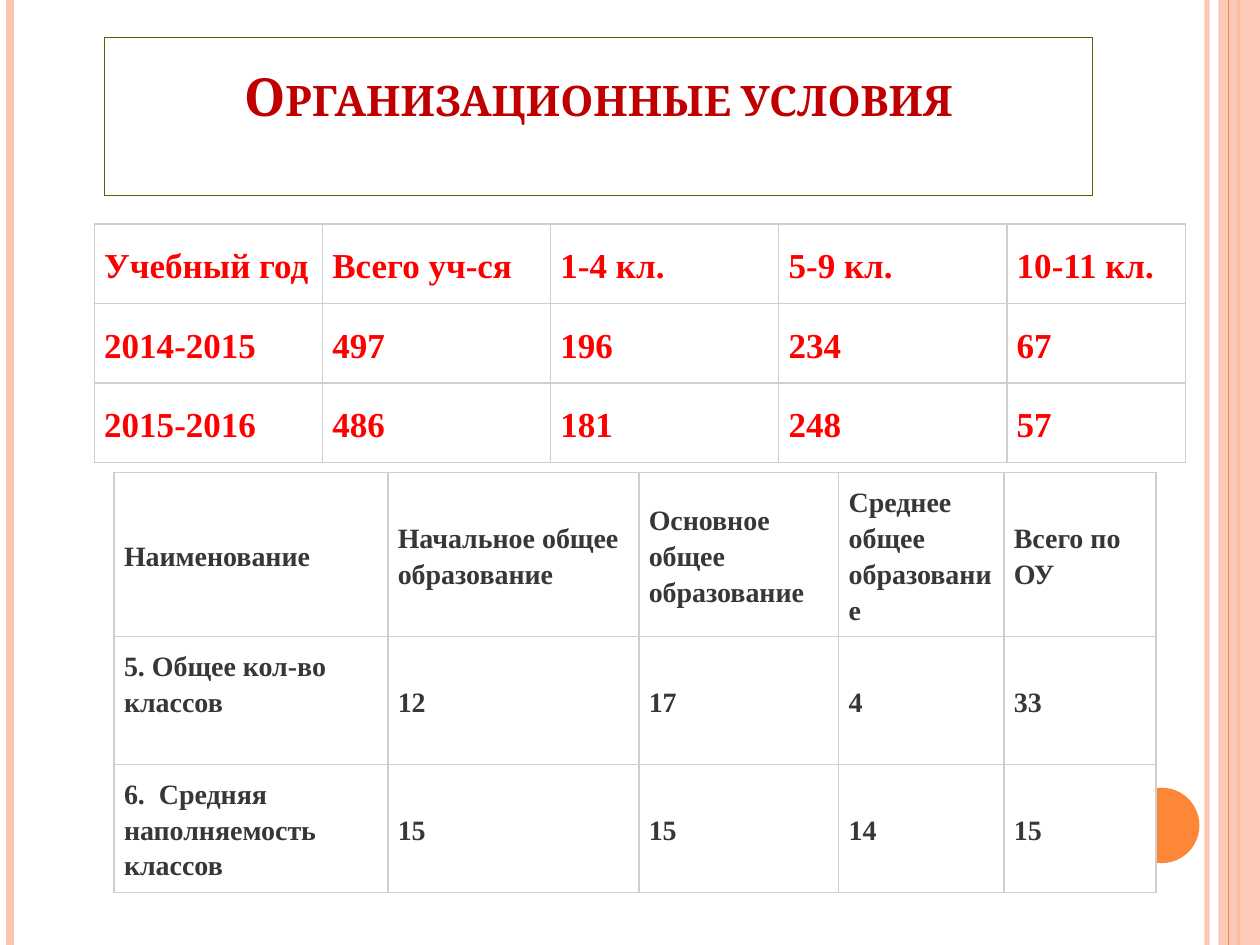
from dataclasses import dataclass

from lxml.etree import SubElement
from pptx import Presentation
from pptx.dml.color import RGBColor
from pptx.enum.shapes import MSO_CONNECTOR, MSO_SHAPE
from pptx.enum.text import MSO_ANCHOR, MSO_AUTO_SIZE, PP_ALIGN
from pptx.oxml.ns import qn
from pptx.util import Cm, Pt

# Content
TITLE = "Организационные условия"

PUPILS = [
    ["Учебный год", "Всего уч-ся", "1-4 кл.", "5-9 кл.", "10-11 кл."],
    ["2014-2015", "497", "196", "234", "67"],
    ["2015-2016", "486", "181", "248", "57"],
]

CLASSES = [
    ["Наименование", "Начальное общее образование", "Основное общее\nобразование",
     "Среднее\nобщее\nобразование", "Всего по ОУ"],
    ["5. Общее кол-во классов", "12", "17", "4", "33"],
    ["6.  Средняя наполняемость классов", "15", "15", "14", "15"],
]


@dataclass(frozen=True)
class Theme:
    white: str = "FFFFFF"
    peach: str = "FEC3AE"
    orange: str = "FE8637"
    frame: str = "675A00"
    grid: str = "CFCFCF"
    title: str = "C00000"
    red: str = "FF0000"
    grey: str = "373737"
    title_font: str = "Cambria"
    table_font: str = "Times New Roman"
    title_size: int = 30
    large: int = 20
    small: int = 16


THEME = Theme()
PAGE_WIDTH, PAGE_HEIGHT = 25.4, 19.05

# Vertical rules: x in cm, colour, width in points, opacity in percent
LEFT_RULES = [
    (24.33, THEME.peach, 3, 93),
    (0.2, THEME.peach, 4.5, 100),
    (24.97, THEME.orange, 1.5, 100),
]
BAND_RULE = (24.77, THEME.orange, 0.75, 100)


def set_opacity(element, percent):
    if percent < 100:
        colour = next(element.iter(qn("a:srgbClr")))
        SubElement(colour, qn("a:alpha"), val=str(percent * 1000))


def add_rule(page, x, colour, width, opacity):
    rule = page.shapes.add_connector(
        MSO_CONNECTOR.STRAIGHT, Cm(x), 0, Cm(x), Cm(PAGE_HEIGHT))
    rule.line.color.rgb = RGBColor.from_string(colour)
    rule.line.width = Pt(width)
    properties = rule.element.spPr
    set_opacity(properties, opacity)
    SubElement(properties, qn("a:effectLst"))


def add_plain_shape(page, kind, place, colour, opacity=100):
    shape = page.shapes.add_shape(kind, *map(Cm, place))
    shape.shadow.inherit = False
    shape.fill.solid()
    shape.fill.fore_color.rgb = RGBColor.from_string(colour)
    shape.line.fill.background()
    set_opacity(shape.element.spPr, opacity)


def style_font(font, name, size, colour):
    font.name = name
    font.size = Pt(size)
    font.bold = True
    font.color.rgb = RGBColor.from_string(colour)


def add_borders(cell):
    properties = cell._tc.get_or_add_tcPr()
    for side in ("a:lnL", "a:lnR", "a:lnT", "a:lnB"):
        line = SubElement(properties, qn(side), w=str(Pt(1)))
        SubElement(SubElement(line, qn("a:solidFill")), qn("a:srgbClr"), val=THEME.grid)


def fill_cell(cell, text, size, colour):
    add_borders(cell)
    cell.fill.solid()
    cell.fill.fore_color.rgb = RGBColor.from_string(THEME.white)
    cell.vertical_anchor = MSO_ANCHOR.MIDDLE
    cell.margin_left = cell.margin_right = Cm(0.2)
    cell.margin_top = cell.margin_bottom = Cm(0.2)
    cell.text = text
    for para in cell.text_frame.paragraphs:
        para.line_spacing = 1.15
        style_font(para.font, THEME.table_font, size, colour)


def add_grid(page, rows, left, top, widths, heights, size, colour):
    table = page.shapes.add_table(
        len(rows), len(widths), Cm(left), Cm(top),
        Cm(sum(widths)), Cm(sum(heights))).table
    for column, width in zip(table.columns, widths):
        column.width = Cm(width)
    for row, height, texts in zip(table.rows, heights, rows):
        row.height = Cm(height)
        for cell, text in zip(row.cells, texts):
            fill_cell(cell, text, size, colour)
    return table


def format_title(page):
    title = page.shapes.title
    title.left, title.top, title.width, title.height = map(Cm, (2.11, 0.76, 19.91, 3.18))
    title.line.color.rgb = RGBColor.from_string(THEME.frame)
    title.line.width = Pt(0.75)
    frame = title.text_frame
    frame.word_wrap = True
    frame.auto_size = MSO_AUTO_SIZE.NONE
    frame.vertical_anchor = MSO_ANCHOR.BOTTOM
    frame.margin_bottom = Cm(1.37)
    para = frame.paragraphs[0]
    para.alignment = PP_ALIGN.CENTER
    span = para.add_run()
    span.text = TITLE
    style_font(span.font, THEME.title_font, THEME.title_size, THEME.title)
    span._r.get_or_add_rPr().set("cap", "small")
    page.shapes.element.append(title.element)  # in front of the decoration


def main():
    deck = Presentation()
    deck.slide_width, deck.slide_height = Cm(PAGE_WIDTH), Cm(PAGE_HEIGHT)
    page = deck.slides.add_slide(deck.slide_layouts[5])

    # Side decoration
    for rule in LEFT_RULES:
        add_rule(page, *rule)
    add_plain_shape(page, MSO_SHAPE.RECTANGLE, (24.56, 0, 0.84, PAGE_HEIGHT),
                    THEME.peach, 87)
    add_rule(page, *BAND_RULE)
    add_plain_shape(page, MSO_SHAPE.OVAL, (22.66, 15.88, 1.52, 1.52), THEME.orange)

    format_title(page)

    # Tables
    add_grid(page, PUPILS, 1.9, 4.52, [4.6] * 4 + [3.6], [1.6] * 3,
             THEME.large, THEME.red)
    classes = add_grid(page, CLASSES, 2.3, 9.53, [5.52, 5.06, 4.03, 3.33, 3.07],
                       [3.3, 2.58, 2.58], THEME.small, THEME.grey)
    classes.cell(1, 0).margin_bottom = Cm(0.92)  # lifts the label by one line

    deck.save("out.pptx")


if __name__ == "__main__":
    main()
